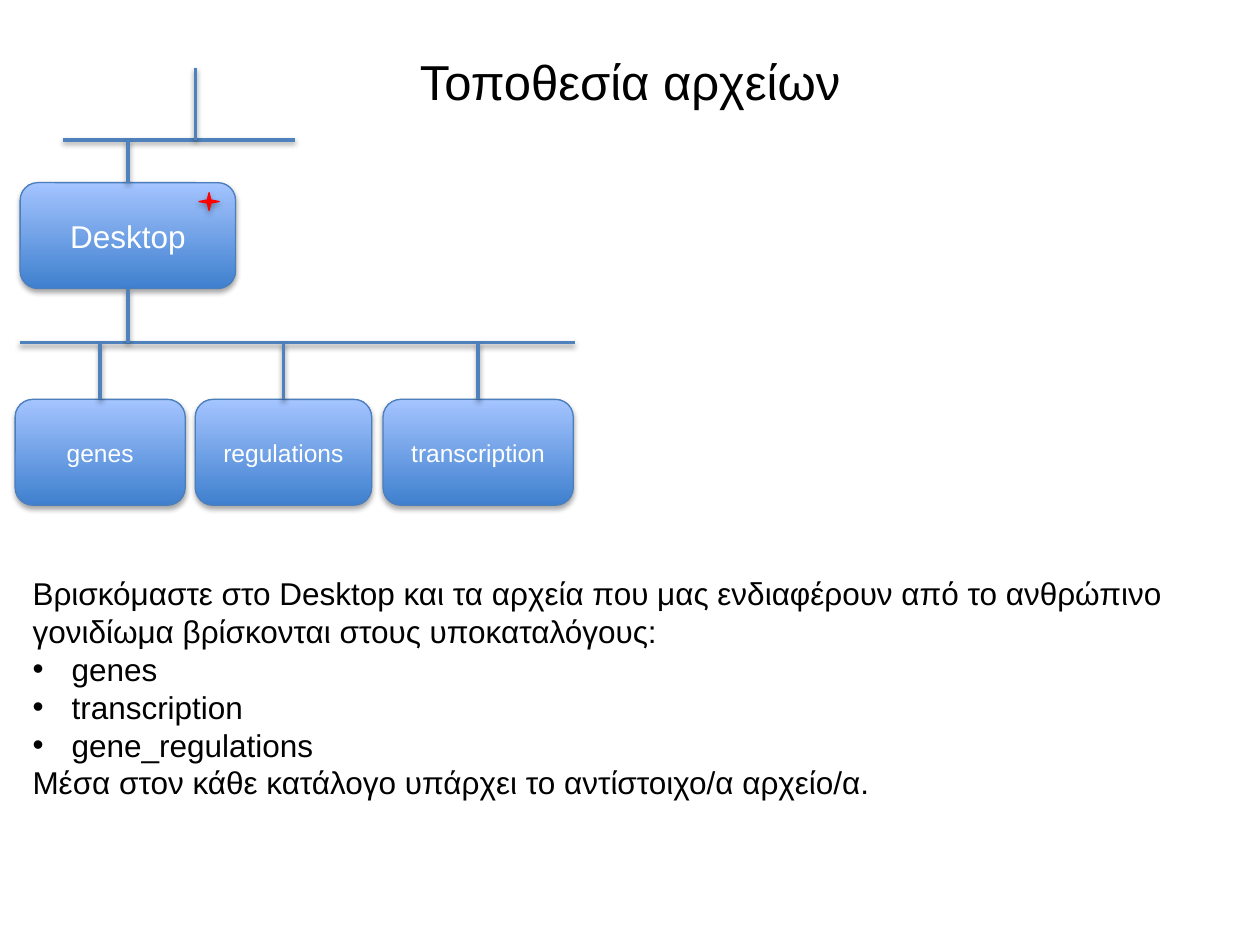
from lxml import etree
from pptx import Presentation
from pptx.dml.color import RGBColor
from pptx.enum.shapes import MSO_CONNECTOR as CONN, MSO_SHAPE as SHAPE
from pptx.enum.text import MSO_ANCHOR as ANCHOR, MSO_AUTO_SIZE as AUTO, PP_ALIGN as ALIGN
from pptx.oxml import parse_xml
from pptx.oxml.ns import nsdecls, qn
from pptx.util import Inches, Pt

WHITE = RGBColor(0xFF, 0xFF, 0xFF)
BLACK = RGBColor(0, 0, 0)
RED = RGBColor(0xFF, 0, 0)
DARK_BLUE = RGBColor(0x3F, 0x80, 0xCE)
LIGHT_BLUE = RGBColor(0xA4, 0xC4, 0xFF)
EDGE_BLUE = RGBColor(0x4B, 0x7E, 0xBC)
LINE_BLUE = RGBColor(0x4F, 0x81, 0xBD)

TITLE = "Τοποθεσία αρχείων"
ROOT = ("Desktop", 0.16, 1.71)
FOLDERS = [("genes", 0.12, 1.35), ("regulations", 1.55, 1.4), ("transcription", 3.04, 1.51)]
BODY = [
    ("Βρισκόμαστε στο Desktop και τα αρχεία που μας ενδιαφέρουν από το ανθρώπινο "
     "γονιδίωμα βρίσκονται στους υποκαταλόγους:", False),
    ("genes", True),
    ("transcription", True),
    ("gene_regulations", True),
    ("Μέσα στον κάθε κατάλογο υπάρχει το αντίστοιχο/α αρχείο/α.", False),
]

BOX_H = 0.84
ROOT_TOP, FOLDER_TOP = 1.45, 3.17
TOP_BAR, LOWER_BAR = 1.11, 2.72
PARENT_X, PARENT_TOP = 1.55, 0.54
INDENT = 0.31


def add_shadow(sp, opacity, dist):
    sp._element.spPr.append(parse_xml(
        f'<a:effectLst {nsdecls("a")}>'
        f'<a:outerShdw blurRad="{Pt(3.1)}" dist="{Pt(dist)}" dir="5400000" rotWithShape="0">'
        f'<a:srgbClr val="000000"><a:alpha val="{opacity * 1000}"/></a:srgbClr>'
        '</a:outerShdw></a:effectLst>'))


def write(p, text, size, color):
    r = p.add_run()
    r.text = text
    for name, value in {"name": "Arial", "size": Pt(size)}.items():
        setattr(r.font, name, value)
    r.font.color.rgb = color


def add_shape(slide, kind, box, edge):
    sp = slide.shapes.add_shape(kind, *map(Inches, box))
    sp.line.color.rgb = edge
    sp.line.width = Pt(0.75)
    return sp


def add_box(slide, label, left, width, top, size):
    sp = add_shape(slide, SHAPE.ROUNDED_RECTANGLE, (left, top, width, BOX_H), EDGE_BLUE)
    sp.fill.gradient()
    sp.fill.gradient_angle = 90
    for stop, color in zip(sp.fill.gradient_stops, (DARK_BLUE, LIGHT_BLUE)):
        stop.color.rgb = color
    add_shadow(sp, 35, 1.8)
    sp.text_frame.vertical_anchor = ANCHOR.MIDDLE
    p = sp.text_frame.paragraphs[0]
    p.alignment = ALIGN.CENTER
    write(p, label, size, WHITE)
    return sp


def add_line(slide, x1, y1, x2, y2):
    line = slide.shapes.add_connector(CONN.STRAIGHT, *map(Inches, (x1, y1, x2, y2)))
    line.line.color.rgb = LINE_BLUE
    line.line.width = Pt(2)
    add_shadow(line, 38, 1.6)
    return line


def add_body(slide):
    sp = slide.shapes.add_textbox(*map(Inches, (0.16, 4.51, 9.58, 1.92)))
    tf = sp.text_frame
    tf.word_wrap = True
    tf.auto_size = AUTO.SHAPE_TO_FIT_TEXT
    for i, (text, bullet) in enumerate(BODY):
        p = tf.add_paragraph() if i else tf.paragraphs[0]
        if bullet:
            pPr = p._p.get_or_add_pPr()
            pPr.set("marL", str(Inches(INDENT)))
            pPr.set("indent", str(Inches(-INDENT)))
            etree.SubElement(pPr, qn("a:buFont"), typeface="Arial")
            etree.SubElement(pPr, qn("a:buChar"), char="•")
        write(p, text, 18, BLACK)


def main():
    prs = Presentation()
    prs.slide_width, prs.slide_height = Inches(10), Inches(7.5)
    slide = prs.slides.add_slide(prs.slide_layouts[5])

    title = slide.shapes.title
    for name, value in zip(("left", "top", "width", "height"), (0.5, 0.3, 9, 0.68)):
        setattr(title, name, Inches(value))
    title.text_frame.vertical_anchor = ANCHOR.MIDDLE
    p = title.text_frame.paragraphs[0]
    p.alignment = ALIGN.CENTER
    write(p, TITLE, 28, BLACK)

    label, left, width = ROOT
    root = add_box(slide, label, left, width, ROOT_TOP, 18)
    star = add_shape(slide, SHAPE.STAR_4_POINT, (1.58, 1.53, 0.16, 0.14), RED)
    star.fill.solid()
    star.fill.fore_color.rgb = RED
    add_shadow(star, 35, 1.8)

    add_line(slide, 0.5, TOP_BAR, 2.34, TOP_BAR)
    add_line(slide, PARENT_X, PARENT_TOP, PARENT_X, TOP_BAR)
    add_line(slide, 0.16, LOWER_BAR, 4.56, LOWER_BAR)
    mid = left + width / 2
    add_line(slide, mid, TOP_BAR, mid, ROOT_TOP).end_connect(root, 0)
    add_line(slide, mid, ROOT_TOP + BOX_H, mid, LOWER_BAR).begin_connect(root, 2)

    for label, left, width in FOLDERS:
        sp = add_box(slide, label, left, width, FOLDER_TOP, 14)
        mid = left + width / 2
        add_line(slide, mid, LOWER_BAR, mid, FOLDER_TOP).end_connect(sp, 0)

    add_body(slide)
    prs.save("out.pptx")


if __name__ == "__main__":
    main()
